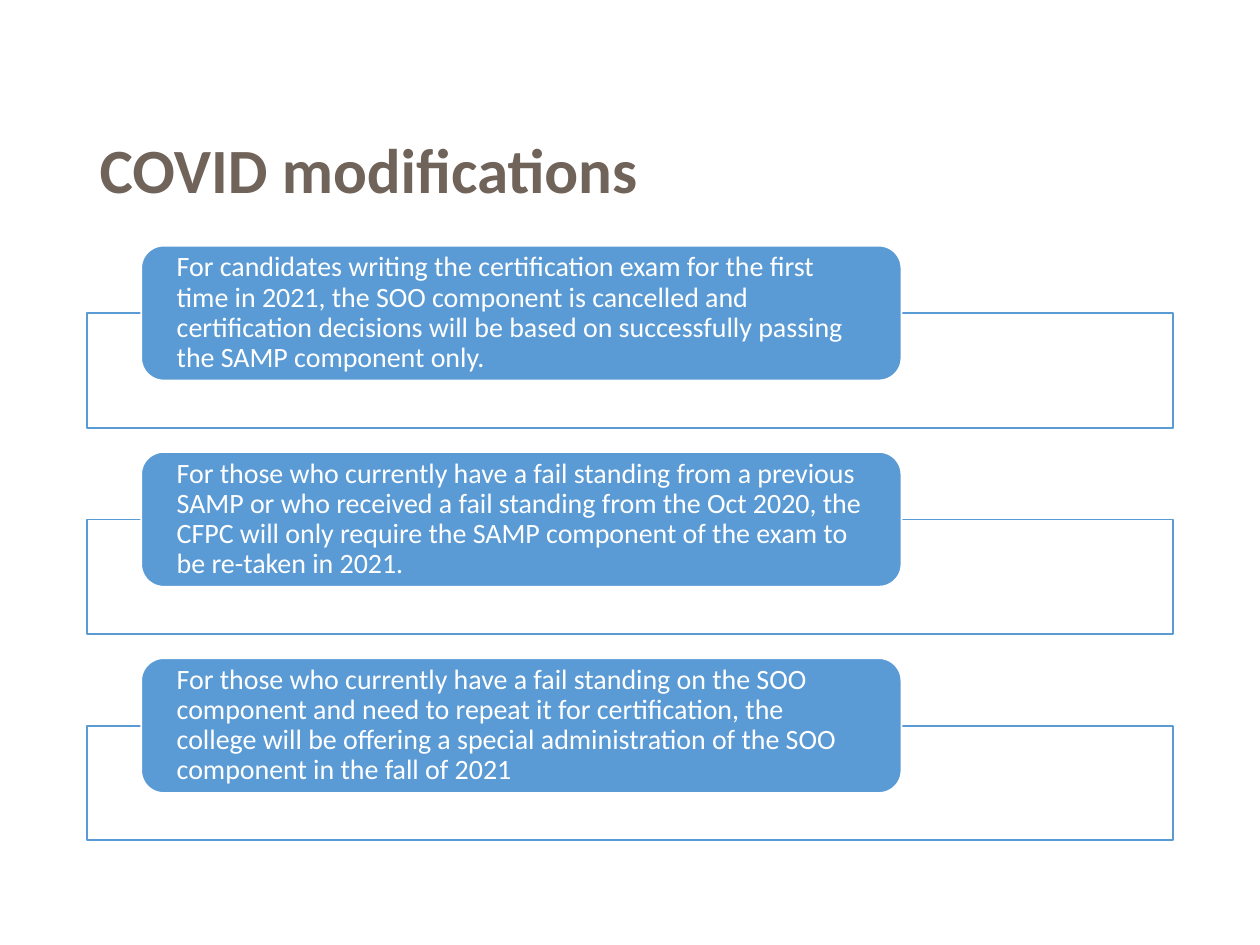
from pptx import Presentation
from pptx.dml.color import RGBColor as RGB
from pptx.enum.shapes import MSO_SHAPE as Shape
from pptx.enum.text import MSO_ANCHOR as Anchor, MSO_AUTO_SIZE as AutoSize, PP_ALIGN as Align
from pptx.util import Inches, Pt

# Content
TITLE = "COVID modifications"
CHANGES = [
    "For candidates writing the certification exam for the first time in 2021, the SOO component "
    "is cancelled and certification decisions will be based on successfully passing the SAMP "
    "component only.",
    "For those who currently have a fail standing from a previous SAMP or who received a fail "
    "standing from the Oct 2020, the CFPC will only require the SAMP component of the exam to be "
    "re-taken in 2021.",
    "For those who currently have a fail standing on the SOO component and need to repeat it for "
    "certification, the college will be offering a special administration of the SOO component in "
    "the fall of 2021",
]

# Theme
BLUE, WHITE, BROWN = (RGB.from_string(c) for c in ("5B9BD5", "FFFFFF", "706359"))
THEME = {
    "title": {"name": "Calibri", "size": Pt(36), "bold": True},
    "body": {"name": "Calibri", "size": Pt(16), "bold": False},
}

# Grid, in inches
W, H = 10, 7.5
MARGIN = 0.69
WIDTH = W - 2 * MARGIN
TOP, PITCH = 1.95, 1.637          # first label and row step
LABEL_H, FRAME_H = 1.07, 0.91
INDENT, LABEL_W = WIDTH * 0.05, WIDTH * 0.7


def write(shape, text, style, color):
    tf = shape.text_frame
    frame_format = {"word_wrap": True, "auto_size": AutoSize.NONE,
                    "vertical_anchor": Anchor.MIDDLE}
    for name, value in frame_format.items():
        setattr(tf, name, value)
    p = tf.paragraphs[0]
    p.alignment, p.line_spacing = Align.LEFT, 0.9
    r = p.add_run()
    r.text = text
    for name, value in THEME[style].items():
        setattr(r.font, name, value)
    r.font.color.rgb = color
    return tf


def add_box(s, kind, box, fill, line):
    sp = s.shapes.add_shape(kind, *map(Inches, box))
    sp.shadow.inherit = False
    sp.fill.solid()
    sp.fill.fore_color.rgb = fill
    sp.line.color.rgb = line
    sp.line.width = Pt(1)
    return sp


prs = Presentation()
prs.slide_width, prs.slide_height = Inches(W), Inches(H)
s = prs.slides.add_slide(prs.slide_layouts[5])

# Title
title = s.shapes.title
title.left, title.top, title.width, title.height = map(Inches, (MARGIN, 0.89, WIDTH, 0.96))
write(title, TITLE, "title", BROWN)

# One frame with an overlapping label per change
for row, text in enumerate(CHANGES):
    y = TOP + row * PITCH
    add_box(s, Shape.RECTANGLE, (MARGIN, y + LABEL_H / 2, WIDTH, FRAME_H), WHITE, BLUE)
    label = add_box(s, Shape.ROUNDED_RECTANGLE,
                    (MARGIN + INDENT, y, LABEL_W, LABEL_H), BLUE, WHITE)
    tf = write(label, text, "body", WHITE)
    tf.margin_left = tf.margin_right = Inches(0.23)
    tf.margin_top = tf.margin_bottom = 0

prs.save("out.pptx")
